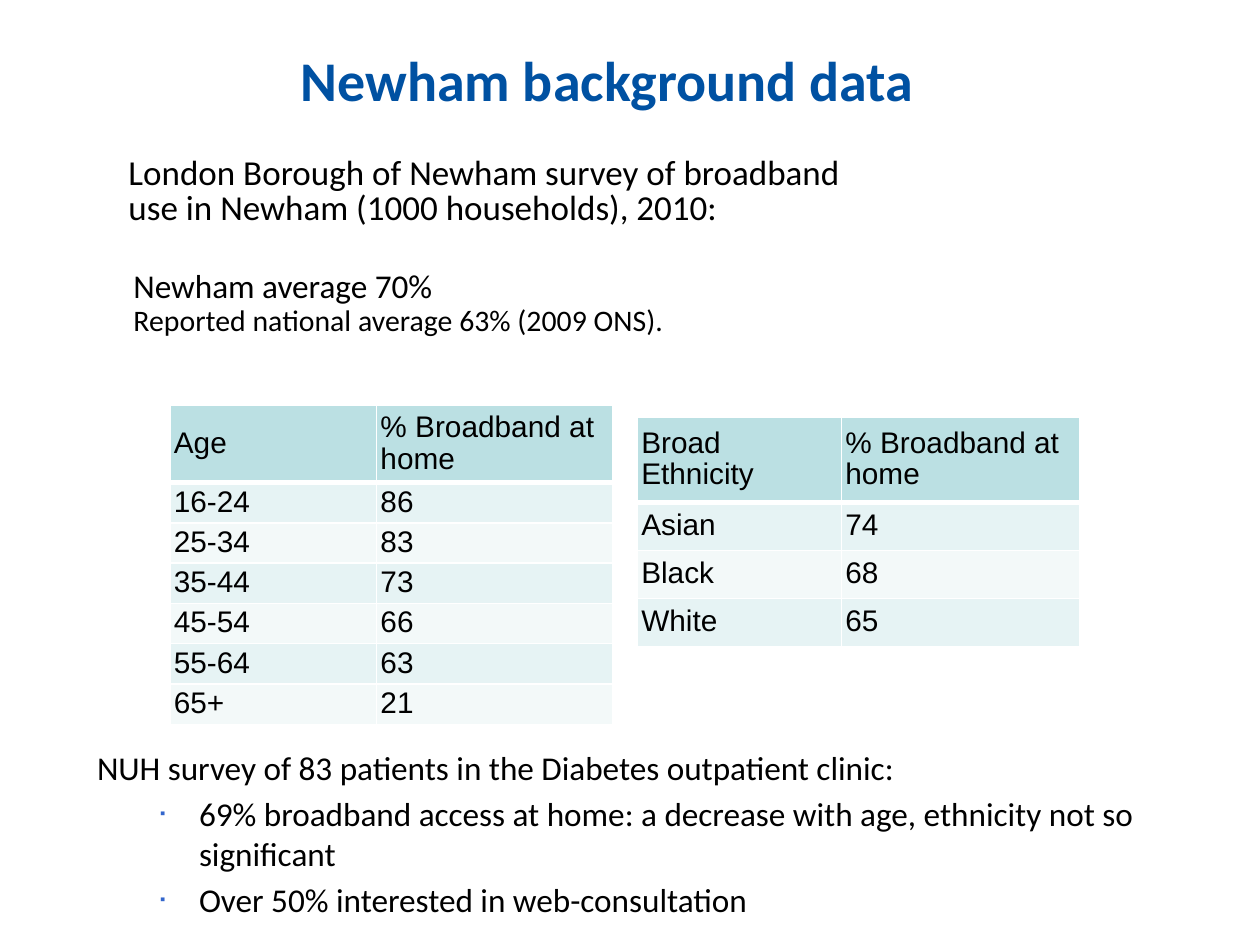
from dataclasses import dataclass

from lxml import etree
from pptx import Presentation
from pptx.dml.color import RGBColor
from pptx.enum import text
from pptx.oxml import ns
from pptx.util import Pt

PX = 9144


@dataclass(frozen=True)
class Theme:
    """Colours, fonts and type sizes of the slide."""
    title: str = "0051A2"
    ink: str = "000000"
    bullet: str = "3366CC"
    header: str = "BBE0E3"
    bands: tuple = ("E6F3F4", "F3F9F9")
    rule: str = "FFFFFF"
    text_font: str = "Calibri"
    table_font: str = "Arial"
    title_size: int = 32
    lead_size: int = 20
    body_size: int = 19
    small_size: int = 17


THEME = Theme()
INSETS = {"margin_left": 3, "margin_top": 6, "margin_right": 3, "margin_bottom": 2}


def set_all(target, values):
    """Set each attribute named in a dict of format values."""
    for name, value in values.items():
        setattr(target, name, value)


def place(shape, box):
    """Move and size a shape to a px box."""
    names = ("left", "top", "width", "height")
    set_all(shape, {name: px * PX for name, px in zip(names, box)})


def set_insets(target, insets):
    """Set the px insets of a text frame or cell."""
    set_all(target, {name: px * PX for name, px in insets.items()})


def write(para, words, size, font=THEME.text_font, colour=THEME.ink, bold=False, **layout):
    """Write one formatted span into a paragraph."""
    set_all(para, layout)
    span = para.add_run()
    span.text = words
    set_all(span.font, {"size": Pt(size), "name": font, "bold": bold})
    span.font.color.rgb = RGBColor.from_string(colour)


def write_lines(frame, lines):
    """Write (words, size, layout) lines as paragraphs."""
    for index, (words, size, layout) in enumerate(lines):
        para = frame.add_paragraph() if index else frame.paragraphs[0]
        write(para, words, size, **layout)


def add_title(page, box, words):
    """Fill the title placeholder."""
    place(page.shapes.title, box)
    frame = page.shapes.title.text_frame
    set_all(frame, {"vertical_anchor": text.MSO_ANCHOR.MIDDLE, "word_wrap": True,
                    "auto_size": text.MSO_AUTO_SIZE.NONE})
    write(frame.paragraphs[0], words, THEME.title_size, colour=THEME.title,
          bold=True, alignment=text.PP_ALIGN.CENTER)


def add_note(page, box, lines):
    """Add a tightly spaced text box of (words, size) lines."""
    frame = page.shapes.add_textbox(0, 0, 0, 0)
    place(frame, box)
    frame = frame.text_frame
    frame.word_wrap = True
    set_insets(frame, INSETS)
    layout = {"line_spacing": 0.84, "space_before": Pt(1.1)}
    write_lines(frame, [(words, size, layout) for words, size in lines])


def set_border(cell, side, width):
    """Draw one cell border in the rule colour."""
    line = etree.SubElement(cell._tc.get_or_add_tcPr(), ns.qn(f"a:ln{side}"), w=str(Pt(width)))
    fill = etree.SubElement(line, ns.qn("a:solidFill"))
    etree.SubElement(fill, ns.qn("a:srgbClr"), val=THEME.rule)


def add_data_table(page, box, columns, heights, rows):
    """Add a table with a header row and alternating bands."""
    frame = page.shapes.add_table(len(rows), len(columns), *(px * PX for px in box))
    table = frame.table
    set_all(table, {"first_row": False, "horz_banding": False})
    for column, width in zip(table.columns, columns):
        column.width = width * PX
    for index, values in enumerate(rows):
        table.rows[index].height = heights[min(index, 1)] * PX
        colour = THEME.bands[(index - 1) % 2] if index else THEME.header
        for cell, words in zip(table.rows[index].cells, values):
            set_insets(cell, {**INSETS, "margin_top": 2})
            cell.vertical_anchor = text.MSO_ANCHOR.MIDDLE
            widths = {"L": 1, "R": 1, "T": 3 if index == 1 else 1, "B": 1 if index else 3}
            for side, width in widths.items():
                set_border(cell, side, width)
            cell.fill.solid()
            cell.fill.fore_color.rgb = RGBColor.from_string(colour)
            write(cell.text_frame.paragraphs[0], words, THEME.small_size,
                  font=THEME.table_font, line_spacing=0.93)


def set_bullet(para, left, hang, mark):
    """Set the px indent of a paragraph and its bullet, if any."""
    props = para._p.get_or_add_pPr()
    props.set("marL", str(left * PX))
    props.set("indent", str(-hang * PX))
    if not mark:
        etree.SubElement(props, ns.qn("a:buNone"))
        return
    colour = etree.SubElement(props, ns.qn("a:buClr"))
    etree.SubElement(colour, ns.qn("a:srgbClr"), val=THEME.bullet)
    etree.SubElement(props, ns.qn("a:buSzPct"), val="45000")
    etree.SubElement(props, ns.qn("a:buFont"), typeface=THEME.table_font)
    etree.SubElement(props, ns.qn("a:buChar"), char=mark)


def add_findings(page, box, lead, findings):
    """Fill the body placeholder with a lead line and its bullets."""
    body = page.placeholders[1]
    place(body, box)
    frame = body.text_frame
    set_all(frame, {"word_wrap": True, "auto_size": text.MSO_AUTO_SIZE.SHAPE_TO_FIT_TEXT})
    lines = [(lead, THEME.body_size, {"space_before": Pt(4)})]
    lines += [(words, THEME.body_size, {"level": 1, "space_before": Pt(3.6)}) for words in findings]
    write_lines(frame, lines)
    for para in frame.paragraphs:
        set_bullet(para, *((81, 31, "▪") if para.level else (0, 0, None)))


def build():
    """Build and save the deck."""
    deck = Presentation()
    set_all(deck, {"slide_width": 1000 * PX, "slide_height": 750 * PX})
    page = deck.slides.add_slide(deck.slide_layouts[1])
    add_title(page, (49, 0, 866, 125), "Newham background data")
    add_note(page, (99, 119, 577, 49), [
        ("London Borough of Newham survey of broadband use in Newham (1000 households), 2010:",
         THEME.lead_size)])
    add_data_table(page, (135, 322, 351, 253), (164, 187), (61, 32), [
        ("Age", "% Broadband at home"), ("16-24", "86"), ("25-34", "83"), ("35-44", "73"),
        ("45-54", "66"), ("55-64", "63"), ("65+", "21")])
    add_note(page, (103, 210, 450, 68), [
        ("Newham average 70%", THEME.body_size),
        ("Reported national average 63% (2009 ONS).", THEME.small_size)])
    add_data_table(page, (506, 331, 351, 182), (162, 189), (68, 38), [
        ("Broad Ethnicity", "% Broadband at home"), ("Asian", "74"), ("Black", "68"),
        ("White", "65")])
    add_findings(page, (67, 588, 890, 149),
                 "NUH survey of 83 patients in the Diabetes outpatient clinic:", [
                     "69% broadband access at home: a decrease with age, ethnicity not so significant",
                     "Over 50% interested in web-consultation"])
    deck.save("out.pptx")


if __name__ == "__main__":
    build()
